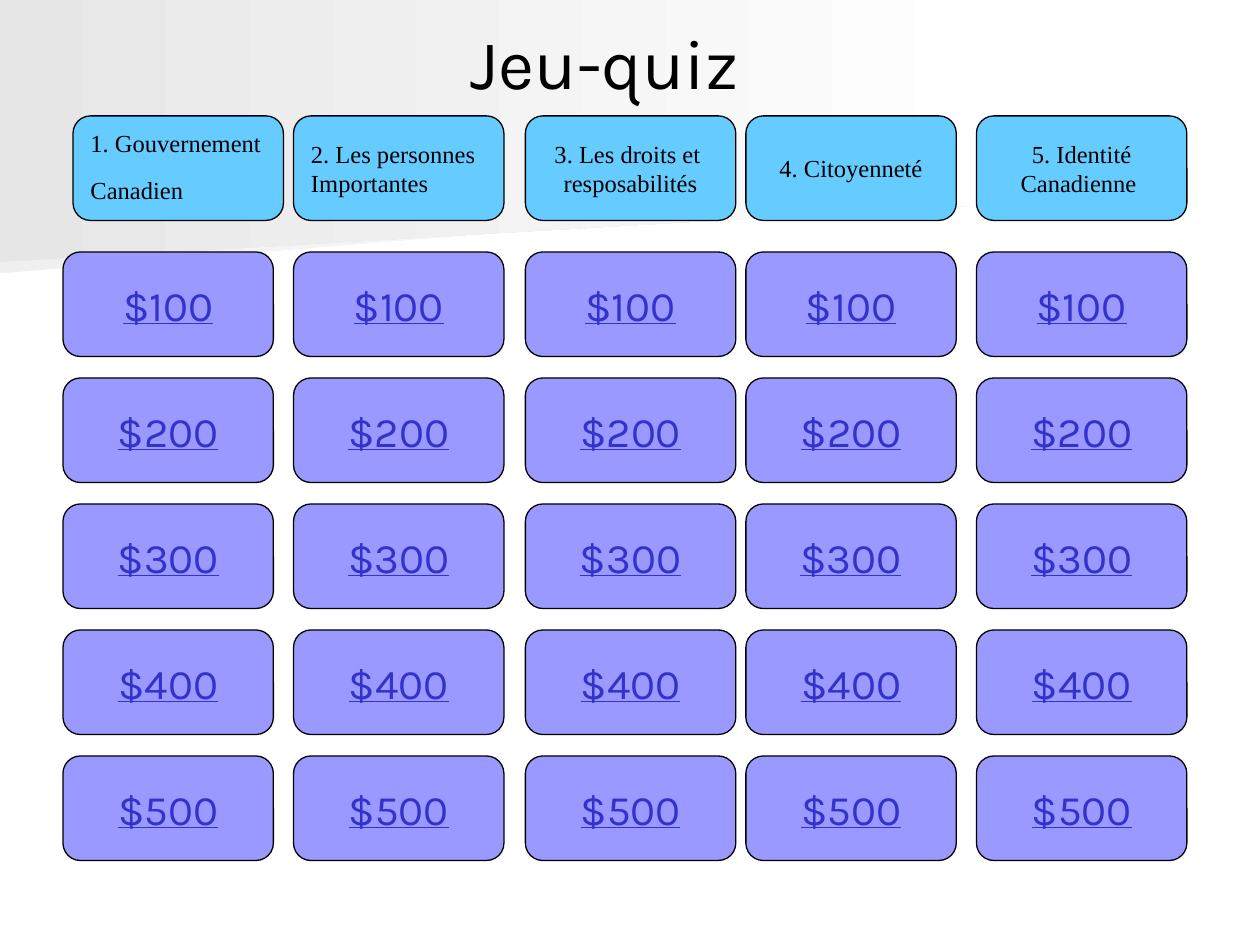
from pptx import Presentation
from pptx.dml.color import RGBColor
from pptx.enum.shapes import MSO_SHAPE
from pptx.enum.text import MSO_ANCHOR, PP_ALIGN
from pptx.util import Inches, Pt

BLACK = RGBColor(0x00, 0x00, 0x00)
WHITE = RGBColor(0xFF, 0xFF, 0xFF)
PALE_GREY = RGBColor(0xF0, 0xF0, 0xF0)
GREY = RGBColor(0xE6, 0xE6, 0xE6)
SKY = RGBColor(0x66, 0xCC, 0xFF)
LAVENDER = RGBColor(0x99, 0x99, 0xFF)
LINK_BLUE = RGBColor(0x33, 0x33, 0xCC)

TITLE_FONT = {"name": "Karla", "size": Pt(40)}
CATEGORY_FONT = {"name": "Times New Roman", "size": Pt(14)}
AMOUNT_FONT = {"name": "Karla", "size": Pt(24), "underline": True}

COLUMN_LEFTS = [0.5, 2.33, 4.17, 5.92, 7.75]
CARD_WIDTH, CARD_HEIGHT = 1.67, 0.83
CATEGORY_TOP, FIRST_CATEGORY_LEFT = 0.92, 0.58
FIRST_AMOUNT_TOP, ROW_PITCH = 2, 1

CATEGORIES = [
    (["1. Gouvernement", "Canadien"], PP_ALIGN.LEFT),
    (["2. Les personnes", "Importantes"], PP_ALIGN.LEFT),
    (["3. Les droits et ", "resposabilités"], PP_ALIGN.CENTER),
    (["4. Citoyenneté"], PP_ALIGN.CENTER),
    (["5. Identité", "Canadienne "], PP_ALIGN.CENTER),
]
AMOUNTS = ["$100", "$200", "$300", "$400", "$500"]


def add_run(paragraph, text, font_format, color):
    run = paragraph.add_run()
    run.text = text
    for attribute, value in font_format.items():
        setattr(run.font, attribute, value)
    run.font.color.rgb = color


def write_lines(frame, lines, font_format, color, align=PP_ALIGN.CENTER):
    frame.word_wrap = True
    frame.vertical_anchor = MSO_ANCHOR.MIDDLE
    for index, line in enumerate(lines):
        paragraph = frame.add_paragraph() if index else frame.paragraphs[0]
        paragraph.alignment = align
        add_run(paragraph, line, font_format, color)


def add_backdrop(slide, corners, start_color):
    points = [(Inches(x), Inches(y)) for x, y in corners]
    builder = slide.shapes.build_freeform(*points[0])
    builder.add_line_segments(points[1:], close=True)
    backdrop = builder.convert_to_shape()
    backdrop.shadow.inherit = False
    backdrop.line.fill.background()
    backdrop.fill.gradient()
    backdrop.fill.gradient_angle = 0
    for stop, color, position in zip(
        backdrop.fill.gradient_stops, (start_color, WHITE), (0, 1)
    ):
        stop.color.rgb = color
        stop.position = position


def add_title(slide, text):
    title = slide.shapes.add_textbox(Inches(0.3), Inches(0.22), Inches(9), Inches(0.53))
    write_lines(title.text_frame, [text], TITLE_FONT, BLACK)


def add_card(slide, left, top, color):
    card = slide.shapes.add_shape(
        MSO_SHAPE.FLOWCHART_ALTERNATE_PROCESS,
        Inches(left), Inches(top), Inches(CARD_WIDTH), Inches(CARD_HEIGHT),
    )
    card.shadow.inherit = False
    card.fill.solid()
    card.fill.fore_color.rgb = color
    card.line.color.rgb = BLACK
    card.line.width = Pt(0.75)
    return card.text_frame


def main():
    prs = Presentation()
    prs.slide_width, prs.slide_height = Inches(10), Inches(7.5)
    slide = prs.slides.add_slide(prs.slide_layouts[6])

    # Slanted grey bands behind the board
    add_backdrop(slide, [(7.78, 1.53), (0, 2.17), (0, 1.01), (7.79, 1.01)], PALE_GREY)
    add_backdrop(slide, [(7.92, 1.62), (0, 2.08), (0, 0), (7.92, 0)], GREY)

    add_title(slide, "Jeu-quiz")

    # Category headings; the first sits slightly right of its column
    category_lefts = [FIRST_CATEGORY_LEFT] + COLUMN_LEFTS[1:]
    for left, (lines, align) in zip(category_lefts, CATEGORIES):
        heading = add_card(slide, left, CATEGORY_TOP, SKY)
        write_lines(heading, lines, CATEGORY_FONT, BLACK, align)
        if left == FIRST_CATEGORY_LEFT:
            # A larger closing space makes the second line taller
            add_run(heading.paragraphs[-1], " ", {**CATEGORY_FONT, "size": Pt(24)}, BLACK)

    # Grid of amounts
    for left in COLUMN_LEFTS:
        for row, amount in enumerate(AMOUNTS):
            cell = add_card(slide, left, FIRST_AMOUNT_TOP + row * ROW_PITCH, LAVENDER)
            write_lines(cell, [amount], AMOUNT_FONT, LINK_BLUE)

    prs.save("out.pptx")


if __name__ == "__main__":
    main()
